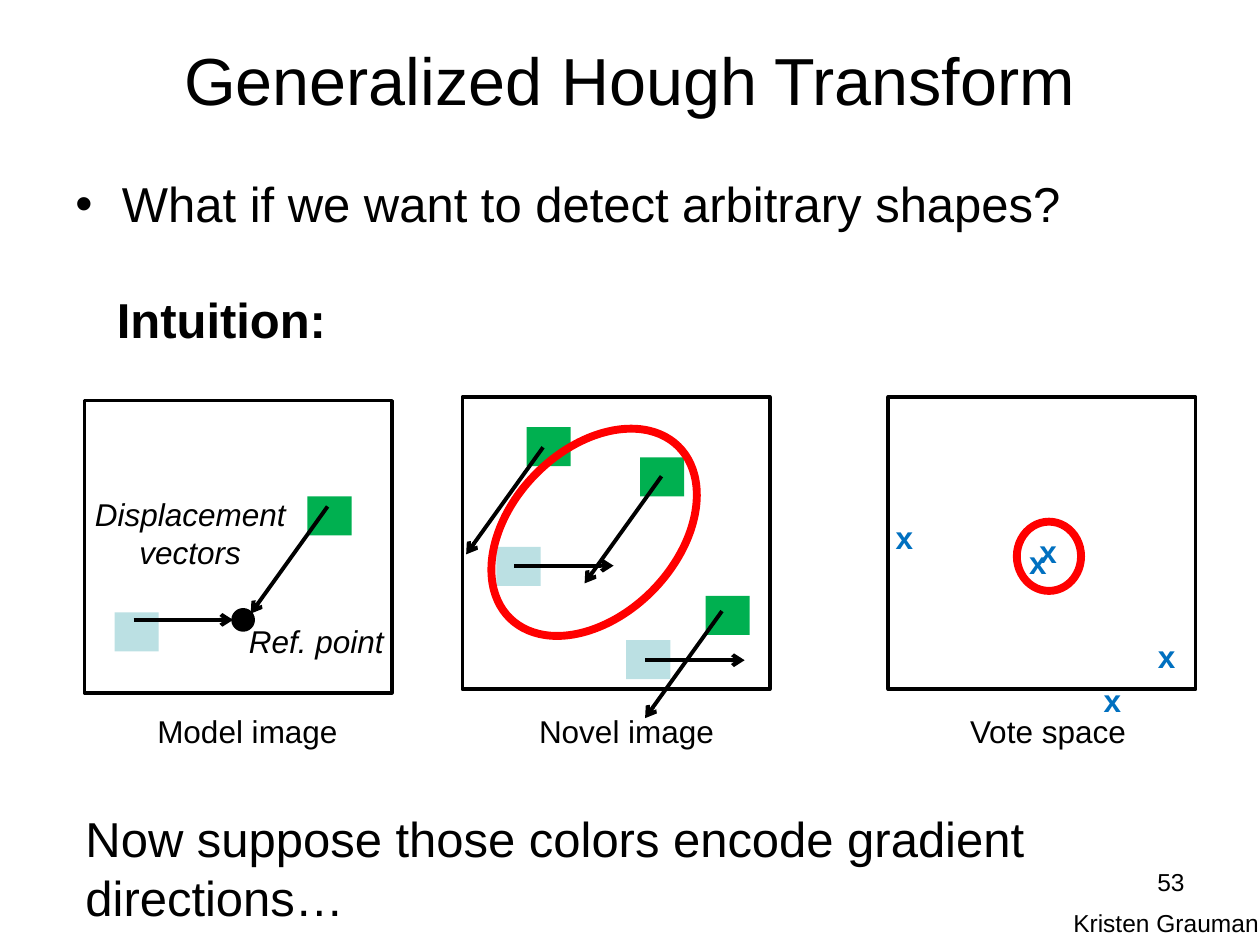
from lxml.etree import SubElement
from pptx import Presentation
from pptx.dml.color import RGBColor
from pptx.enum.shapes import MSO_CONNECTOR, MSO_SHAPE as SHAPE
from pptx.enum.text import MSO_ANCHOR, MSO_AUTO_SIZE, PP_ALIGN as ALIGN
from pptx.oxml.ns import qn
from pptx.util import Inches, Pt

BLACK, RED, VOTE_BLUE = "000000", "FF0000", "0070C0"
GREEN, PALE_BLUE = "00B050", "BBE0E3"
DIAGONAL, ACROSS = (-0.61, 0.85), (0.79, 0)


def rgb(value):
    return RGBColor.from_string(value)


def style_text(tf, text, size, color=BLACK, bold=False, italic=False, align=ALIGN.LEFT):
    tf.text = text
    p = tf.paragraphs[0]
    p.alignment = align
    font = p.runs[0].font
    font.name, font.size = "Arial", Pt(size)
    font.bold, font.italic = bold, italic
    font.color.rgb = rgb(color)
    return p


def add_text(slide, text, left, top, width, height, size=18, wrap=True, **style):
    tf = slide.shapes.add_textbox(*map(Inches, (left, top, width, height))).text_frame
    tf.word_wrap = wrap
    return style_text(tf, text, size, **style)


def add_bullet(p, indent):
    pPr = p._p.get_or_add_pPr()
    pPr.set("marL", str(Inches(indent)))
    pPr.set("indent", str(-Inches(indent)))
    SubElement(pPr, qn("a:buFont"), typeface="Arial")
    SubElement(pPr, qn("a:buChar"), char="•")


def add_figure(slide, kind, left, top, width, height, fill=None, line=None, weight=2):
    sp = slide.shapes.add_shape(kind, *map(Inches, (left, top, width, height)))
    sp.shadow.inherit = False
    if fill:
        sp.fill.solid()
        sp.fill.fore_color.rgb = rgb(fill)
    else:
        sp.fill.background()
    if line:
        sp.line.color.rgb = rgb(line)
        sp.line.width = Pt(weight)
    else:
        sp.line.fill.background()
    return sp


def add_patches(slide, color, corners):
    for left, top in corners:
        add_figure(slide, SHAPE.RECTANGLE, left, top, 0.35, 0.31, fill=color)


def add_vectors(slide, displacement, starts):
    """Draw the same displacement arrow from each starting point."""
    dx, dy = displacement
    for x, y in starts:
        line = slide.shapes.add_connector(
            MSO_CONNECTOR.STRAIGHT, *map(Inches, (x, y, x + dx, y + dy)))
        line.line.color.rgb = rgb(BLACK)
        line.line.width = Pt(2.25)
        SubElement(line.line._get_or_add_ln(), qn("a:tailEnd"), type="arrow")
        SubElement(line._element.spPr, qn("a:effectLst"))


def add_panel(slide, left, top, label, label_left, label_width):
    add_figure(slide, SHAPE.RECTANGLE, left, top, 2.44, 2.32, line=BLACK)
    add_text(slide, label, label_left, 5.6, label_width, 0.4, wrap=False)


def add_model_image(slide):
    add_panel(slide, 0.67, 3.18, "Model image", 1.15, 1.65)
    add_patches(slide, PALE_BLUE, [(0.91, 4.86)])
    add_patches(slide, GREEN, [(2.44, 3.94)])
    add_figure(slide, SHAPE.OVAL, 1.85, 4.84, 0.16, 0.16, fill=BLACK, line=BLACK)
    add_vectors(slide, DIAGONAL, [(2.6, 4.02)])
    add_vectors(slide, ACROSS, [(1.06, 4.92)])
    add_text(slide, "Ref. point", 1.6, 4.89, 1.82, 0.4, italic=True, align=ALIGN.CENTER)
    add_text(slide, "Displacement vectors", 0.6, 3.88, 1.82, 0.71,
             italic=True, align=ALIGN.CENTER)


def add_novel_image(slide):
    add_panel(slide, 3.67, 3.15, "Novel image", 4.18, 1.6)
    add_patches(slide, GREEN, [(4.18, 3.39), (5.08, 3.63), (5.6, 4.73)])
    add_patches(slide, PALE_BLUE, [(3.94, 4.34), (4.97, 5.08)])
    add_vectors(slide, DIAGONAL, [(4.31, 3.55), (5.25, 3.78), (5.73, 4.85)])
    add_vectors(slide, ACROSS, [(4.08, 4.49), (5.12, 5.24)])
    detected = add_figure(slide, SHAPE.OVAL, 4.06, 3.27, 1.31, 1.91, line=RED, weight=4.5)
    detected.rotation = 44.3


def add_vote_space(slide):
    add_panel(slide, 7.05, 3.15, "Vote space", 7.6, 1.45)
    for left, top in [(8.07, 4.26), (8.15, 4.17), (7.01, 4.06), (8.66, 5.36), (9.09, 5.01)]:
        add_text(slide, "x", left, top, 0.98, 0.4, color=VOTE_BLUE, bold=True)
    add_figure(slide, SHAPE.OVAL, 8.07, 4.14, 0.51, 0.55, line=RED, weight=4.5)


def add_title(slide, text):
    title = slide.shapes.title
    title.left, title.top, title.width, title.height = map(Inches, (0, 0, 10, 1.25))
    tf = title.text_frame
    tf.auto_size = MSO_AUTO_SIZE.NONE
    tf.vertical_anchor = MSO_ANCHOR.MIDDLE
    style_text(tf, text, 38, align=ALIGN.CENTER)


def main():
    prs = Presentation()
    prs.slide_width, prs.slide_height = Inches(10), Inches(7.5)
    slide = prs.slides.add_slide(prs.slide_layouts[5])

    add_title(slide, "Generalized Hough Transform")
    question = add_text(slide, "What if we want to detect arbitrary shapes?",
                        0.5, 1.33, 9, 0.87, size=28)
    question.space_before = Pt(4)
    add_bullet(question, 0.37)
    add_text(slide, "Intuition:", 0.83, 2.25, 2.2, 0.57, size=28, bold=True)

    add_model_image(slide)
    add_novel_image(slide)
    add_vote_space(slide)

    add_text(slide, "Now suppose those colors encode gradient directions…",
             0.58, 6.37, 9.41, 1.04, size=28)
    add_text(slide, "Kristen Grauman", 8.42, 7.16, 2, 0.34, size=14)
    add_text(slide, "53", 7.17, 6.83, 2.33, 0.52, size=14, align=ALIGN.RIGHT)
    prs.save("out.pptx")


if __name__ == "__main__":
    main()
